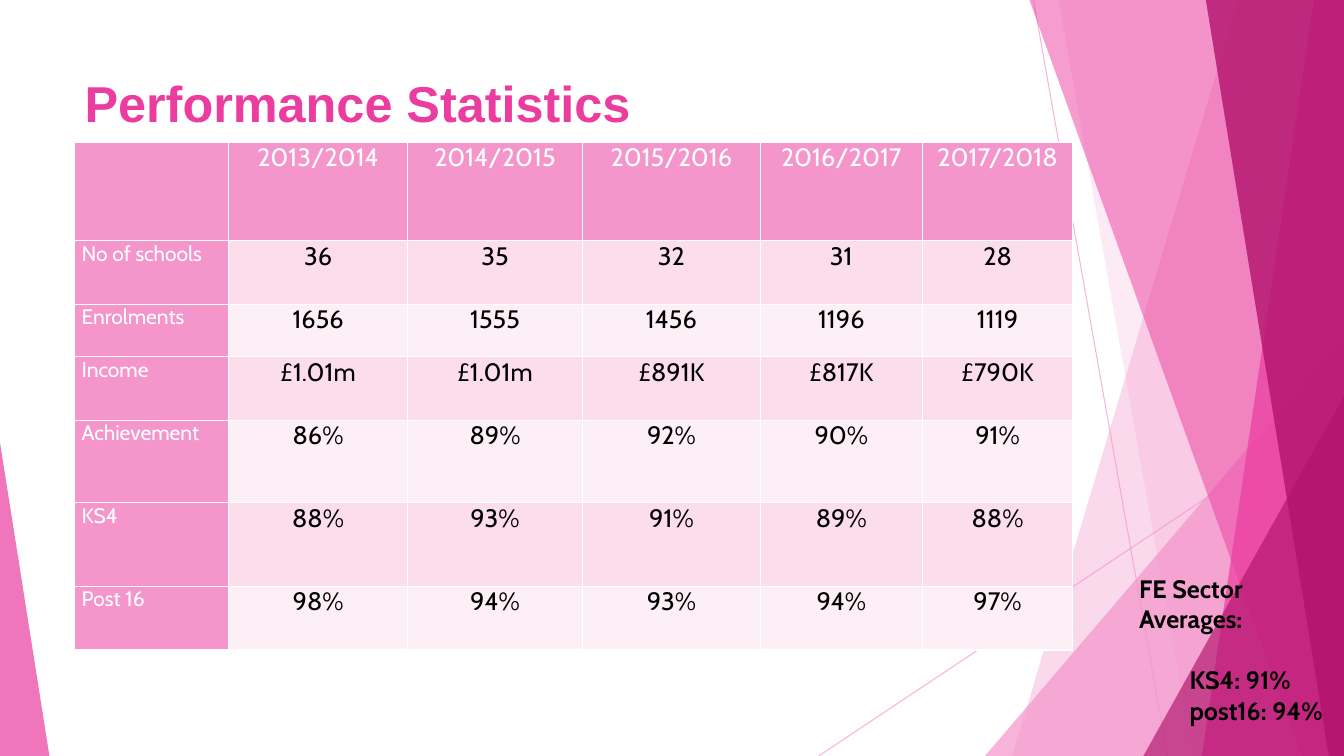
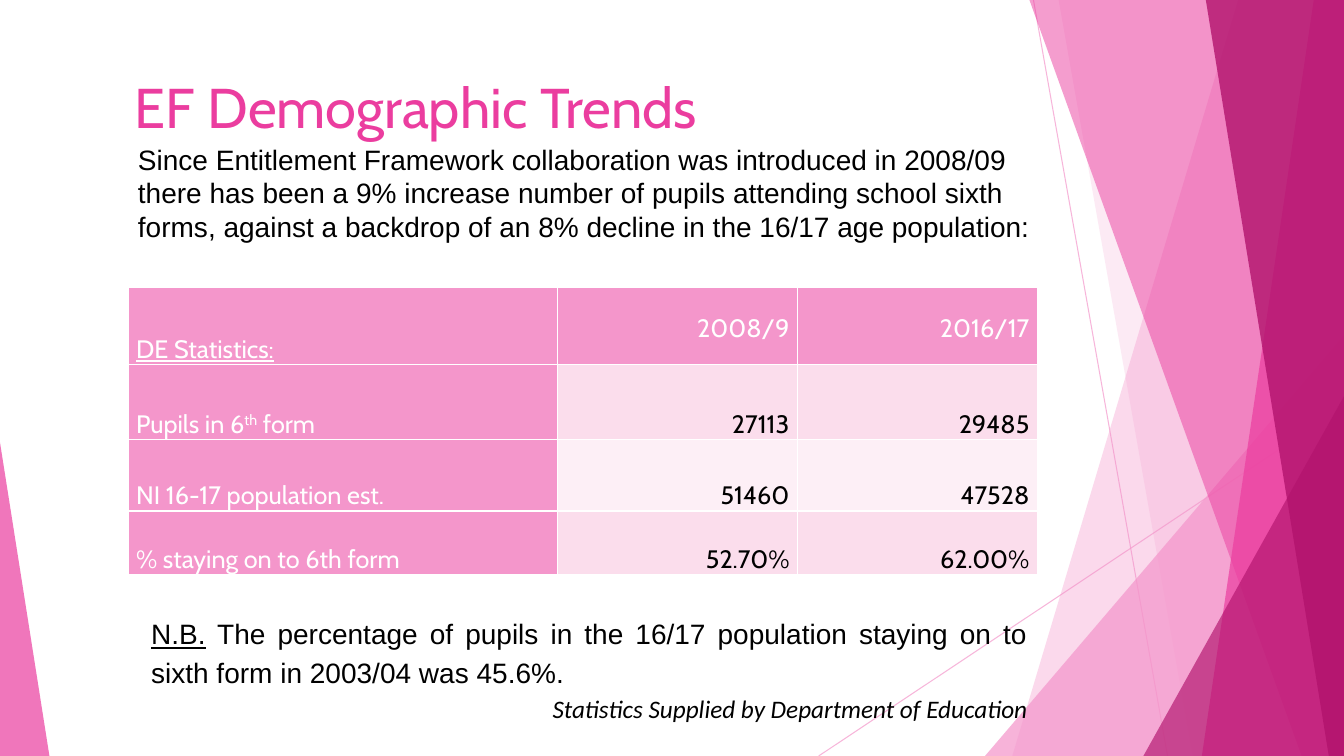
from pptx import Presentation
from pptx.dml.color import RGBColor
from pptx.enum.shapes import MSO_CONNECTOR, MSO_SHAPE
from pptx.enum.text import MSO_ANCHOR, PP_ALIGN
from pptx.oxml.ns import qn
from pptx.util import Inches, Pt
from lxml import etree

LEFT, CENTER, RIGHT, JUSTIFY = PP_ALIGN.LEFT, PP_ALIGN.CENTER, PP_ALIGN.RIGHT, PP_ALIGN.JUSTIFY
TOP, MIDDLE, BOTTOM = MSO_ANCHOR.TOP, MSO_ANCHOR.MIDDLE, MSO_ANCHOR.BOTTOM
STRAIGHT, TRIANGLE = MSO_CONNECTOR.STRAIGHT, MSO_SHAPE.ISOSCELES_TRIANGLE

COLORS = {"light": "F496CB", "pink": "EB3D9F", "dark": "B2136D", "white": "FFFFFF",
          "black": "000000", "band": "FBDDEC", "pale": "FDEFF6"}
WIDTH, HEIGHT = 13.33, 7.5

RAYS = [((10.25, 0), (11.58, HEIGHT)), ((WIDTH, 4.03), (8.12, HEIGHT))]
FACETS = [
    ("slant", (12.28, 10.04), "light", 36),
    ("slant", (10.5, 11.83), "light", 20),
    ("triangle", (9.77, 3.33, 3.56, 1), "light", 72),
    ("slant", (10.21, 12.91), "pink", 50),
    ("slant", (13.03, 11.92), "pink", 70),
    ("slant", (11.96, 13.18), "dark", 80),
    ("triangle", (11.34, 3.93, 1.99, 1), "dark", 66),
    ("triangle", (0, 4.39, 0.49, 0), "pink", 70),
]

PERFORMANCE = [
    ["", "2013/2014", "2014/2015", "2015/2016", "2016/2017", "2017/2018"],
    ["No of schools", "36", "35", "32", "31", "28"],
    ["Enrolments", "1656", "1555", "1456", "1196", "1119"],
    ["Income", "£1.01m", "£1.01m", "£891K", "£817K", "£790K"],
    ["Achievement", "86%", "89%", "92%", "90%", "91%"],
    ["KS4", "88%", "93%", "91%", "89%", "88%"],
    ["Post 16", "98%", "94%", "93%", "94%", "97%"],
]
PERFORMANCE_COLUMNS = [1.53, 1.77, 1.74, 1.76, 1.61, 1.49]
PERFORMANCE_ROWS = [0.98, 0.63, 0.52, 0.63, 0.82, 0.83, 0.63]

TRENDS = [
    [[("DE Statistics:", {"underline": True})], "2008/9", "2016/17"],
    [["Pupils in 6", ("th", {"raised": True}), " form"], "27113", "29485"],
    ["NI 16-17 population est.", "51460", "47528"],
    ["% staying on to 6th form", "52.70%", "62.00%"],
]
TRENDS_COLUMNS = [4.26, 2.38, 2.38]
TRENDS_ROWS = [0.77, 0.74, 0.71, 0.63]

INTRO = ("Since Entitlement Framework collaboration was introduced in 2008/09 there has been "
         "a 9% increase number of pupils attending school sixth forms, against a backdrop of "
         "an 8% decline in the 16/17 age population:")
NOTE = [("N.B.", {"underline": True}),
        " The percentage of pupils in the 16/17 population staying on to sixth form "
        "in 2003/04 was 45.6%."]
CREDIT = "Statistics Supplied by Department of Education"


def rgb(name):
    return RGBColor.from_string(COLORS[name])


def set_alpha(shape, percent):
    for color in shape._element.spPr.iter(qn("a:srgbClr")):
        etree.SubElement(color, qn("a:alpha"), val=str(percent * 1000))


def write(paragraph, text, size=18, font="Cabin", color="black", bold=False, italic=False,
          align=LEFT, spacing=None, before=None, indent=0):
    paragraph.alignment = align
    if spacing:
        paragraph.line_spacing = spacing
    if before:
        paragraph.space_before = Pt(before)
    if indent:
        paragraph._p.get_or_add_pPr().set("marL", str(Inches(indent)))
    for piece in [text] if isinstance(text, str) else text:
        words, marks = (piece, {}) if isinstance(piece, str) else piece
        run = paragraph.add_run()
        run.text = words
        run.font.size, run.font.name = Pt(size), font
        run.font.bold, run.font.italic = bold, italic
        run.font.underline = marks.get("underline", False)
        run.font.color.rgb = rgb(color)
        if marks.get("raised"):
            run._r.get_or_add_rPr().set("baseline", "30000")


def add_text(slide, box, paragraphs):
    frame = slide.shapes.add_textbox(*map(Inches, box)).text_frame
    frame.word_wrap = True
    for index, (text, style) in enumerate(paragraphs):
        write(frame.add_paragraph() if index else frame.paragraphs[0], text, **style)


def add_facets(slide):
    for start, end in RAYS:
        ray = slide.shapes.add_connector(STRAIGHT, *map(Inches, start + end))
        ray.line.color.rgb = rgb("light")
        ray.line.width = Pt(0.75)
        set_alpha(ray, 70)
        etree.SubElement(ray._element.spPr, qn("a:effectLst"))
    for kind, place, color, alpha in FACETS:
        if kind == "slant":
            top_x, bottom_x = place
            corners = [(WIDTH, 0), (WIDTH, HEIGHT), (bottom_x, HEIGHT)]
            outline = slide.shapes.build_freeform(Inches(top_x), 0)
            outline.add_line_segments([(Inches(x), Inches(y)) for x, y in corners])
            facet = outline.convert_to_shape()
        else:
            left, top, width, apex = place
            facet = slide.shapes.add_shape(
                TRIANGLE, *map(Inches, (left, top, width, HEIGHT - top)))
            facet.adjustments[0] = apex
        facet.shadow.inherit = False
        facet.fill.solid()
        facet.fill.fore_color.rgb = rgb(color)
        facet.line.fill.background()
        set_alpha(facet, alpha)


def add_borders(cell):
    properties = cell._tc.get_or_add_tcPr()
    for index, side in enumerate(("lnL", "lnR", "lnT", "lnB")):
        border = etree.Element(qn("a:" + side), w=str(Pt(1)))
        fill = etree.SubElement(border, qn("a:solidFill"))
        etree.SubElement(fill, qn("a:srgbClr"), val=COLORS["white"])
        properties.insert(index, border)


def add_grid(slide, left, top, columns, heights, rows, align, inset,
             label_size=18, spacing=None, anchor=TOP, header_anchor=TOP):
    table = slide.shapes.add_table(
        len(rows), len(columns),
        *map(Inches, (left, top, sum(columns), sum(heights)))).table
    table.horz_banding = False
    for column, width in zip(table.columns, columns):
        column.width = Inches(width)
    for row, height in zip(table.rows, heights):
        row.height = Inches(height)
    for r, values in enumerate(rows):
        for c, value in enumerate(values):
            cell = table.cell(r, c)
            heading = r == 0 or c == 0
            cell.margin_left = cell.margin_right = Inches(inset)
            cell.margin_top = cell.margin_bottom = 0
            cell.vertical_anchor = header_anchor if r == 0 and c else anchor
            cell.fill.solid()
            cell.fill.fore_color.rgb = rgb("light" if heading else "band" if r % 2 else "pale")
            add_borders(cell)
            if value:
                write(cell.text_frame.paragraphs[0], value,
                      size=18 if c else label_size,
                      color="white" if heading else "black",
                      align=align if c else LEFT, spacing=spacing)


def new_slide(deck, title, left, **style):
    slide = deck.slides.add_slide(deck.slide_layouts[6])
    add_facets(slide)
    add_text(slide, (left, 0.67, 8.9, 0.75), [(title, {"color": "pink", **style})])
    return slide


def main():
    deck = Presentation()
    deck.slide_width, deck.slide_height = Inches(WIDTH), Inches(HEIGHT)

    performance = new_slide(deck, "Performance Statistics", 0.74,
                            size=36, font="Arial", bold=True)
    add_grid(performance, 0.74, 1.41, PERFORMANCE_COLUMNS, PERFORMANCE_ROWS, PERFORMANCE,
             CENTER, 0.07, label_size=15)
    add_text(performance, (11.2, 5.64, 2.13, 1.62), [
        ("FE Sector Averages:", {"bold": True}),
        ("KS4: 91%", {"bold": True, "before": 22, "indent": 0.5}),
        ("post16: 94%", {"bold": True, "indent": 0.5}),
    ])

    trends = new_slide(deck, "EF Demographic Trends", 1.24, size=40)
    add_text(trends, (1.27, 1.36, 9.1, 1.15), [(INTRO, {"size": 20, "font": "Arial"})])
    add_grid(trends, 1.27, 2.85, TRENDS_COLUMNS, TRENDS_ROWS, TRENDS, RIGHT, 0.08,
             spacing=1.15, anchor=BOTTOM, header_anchor=MIDDLE)
    add_text(trends, (1.4, 6.02, 8.89, 1.22), [
        (NOTE, {"size": 20, "font": "Arial", "align": JUSTIFY, "spacing": 1.15}),
        (CREDIT, {"font": "Calibri", "italic": True, "align": RIGHT, "spacing": 1.15}),
    ])

    deck.save("out.pptx")


if __name__ == "__main__":
    main()
